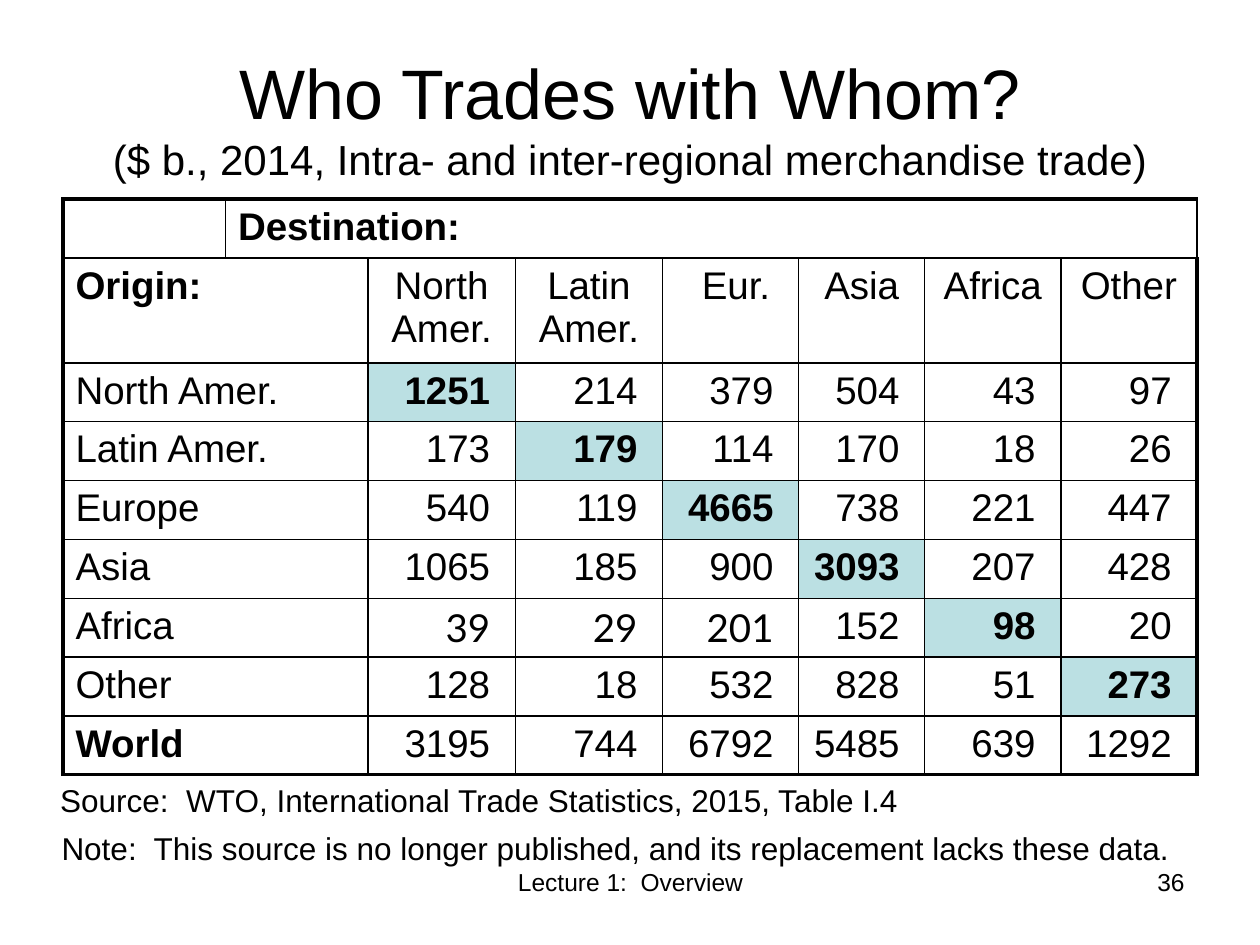
from lxml import etree
from pptx import Presentation
from pptx import util as u
from pptx.dml.color import RGBColor
from pptx.enum import text
from pptx.oxml import ns

BLACK = RGBColor(0x00, 0x00, 0x00)
PALE_TEAL = RGBColor(0xBB, 0xE0, 0xE3)
LEFT, CENTER, RIGHT = (text.PP_ALIGN.LEFT, text.PP_ALIGN.CENTER, text.PP_ALIGN.RIGHT)

# The slide is a grid of 100 columns by 75 rows
WIDTH, HEIGHT = u.Inches(10), u.Inches(7.5)
COL, ROW = WIDTH // 100, HEIGHT // 75

COL_WIDTHS = [12.9, 11.3, 11.7, 11.7, 10.8, 10, 10.8, 10.8]
ROW_HEIGHTS = [4.2, 8.3] + [4.4] * 5 + [4.5] * 2
DESTINATIONS = ["North Amer.", "Latin Amer.", " Eur.", "Asia", "Africa", "Other"]
TRADE = {
    "North Amer.": [1251, 214, 379, 504, 43, 97],
    "Latin Amer.": [173, 179, 114, 170, 18, 26],
    "Europe": [540, 119, 4665, 738, 221, 447],
    "Asia": [1065, 185, 900, 3093, 207, 428],
    "Africa": [39, 29, 201, 152, 98, 20],
    "Other": [128, 18, 532, 828, 51, 273],
    "World": [3195, 744, 6792, 5485, 639, 1292],
}


def grid(left, top, width, height):
    return int(left * COL), int(top * ROW), int(width * COL), int(height * ROW)


def add_run(p, words, size, bold=False, font="Arial"):
    r = p.add_run()
    r.text = words
    for name, value in {"name": font, "size": u.Pt(size), "bold": bold}.items():
        setattr(r.font, name, value)
    r.font.color.rgb = BLACK


def space_before(p, percent):
    pPr = p._p.get_or_add_pPr()
    spacing = etree.Element(ns.qn("a:spcBef"))
    etree.SubElement(spacing, ns.qn("a:spcPct"), val=str(percent * 1000))
    pPr.insert(0, spacing)


def add_title(s, box):
    title = s.shapes.title
    title.left, title.top, title.width, title.height = box
    tf = title.text_frame
    tf.auto_size = text.MSO_AUTO_SIZE.NONE
    tf.vertical_anchor = text.MSO_ANCHOR.MIDDLE
    p = tf.paragraphs[0]
    p.alignment = CENTER
    add_run(p, "Who Trades with Whom?", 40)
    p.add_line_break()
    add_run(p, "($ b., 2014, Intra- and inter-regional merchandise trade)", 24)


def add_line(s, box, words, size, align=LEFT, before=0, margin=0.05):
    tf = s.shapes.add_textbox(*box).text_frame
    tf.word_wrap = True
    tf.margin_top = tf.margin_bottom = u.Inches(margin)
    p = tf.paragraphs[0]
    p.alignment = align
    if before:
        space_before(p, before)
    add_run(p, words, size)


def set_borders(cell, widths):
    tcPr = cell._tc.get_or_add_tcPr()
    for i, (side, width) in enumerate(widths.items()):
        ln = etree.Element(ns.qn("a:ln" + side), w=str(u.Pt(width)))
        fill = etree.SubElement(ln, ns.qn("a:solidFill"))
        etree.SubElement(fill, ns.qn("a:srgbClr"), val=str(BLACK))
        tcPr.insert(i, ln)


def write_cell(cell, words, align=LEFT, bold=False, font="Arial"):
    p = cell.text_frame.paragraphs[0]
    p.alignment = align
    space_before(p, 20)
    add_run(p, words, 22, bold, font)


def add_trade_table(s, box):
    rows, cols = len(ROW_HEIGHTS), len(COL_WIDTHS)
    table = s.shapes.add_table(rows, cols, *box).table
    table.first_row = table.horz_banding = False
    for column, width in zip(table.columns, COL_WIDTHS):
        column.width = int(width * COL)
    for row, height in zip(table.rows, ROW_HEIGHTS):
        row.height = int(height * ROW)

    # Thick frame, thin inner rules
    for i in range(rows):
        for j in range(cols):
            cell = table.cell(i, j)
            cell.fill.background()
            outer = {"L": j == 0, "R": j == cols - 1, "T": i == 0, "B": i == rows - 1}
            set_borders(cell, {k: 2.25 if edge else 1 for k, edge in outer.items()})

    # Headings
    table.cell(0, 1).merge(table.cell(0, cols - 1))
    write_cell(table.cell(0, 1), "Destination:", bold=True)
    for j, name in enumerate(DESTINATIONS, 2):
        write_cell(table.cell(1, j), name, CENTER)
    for i, name in enumerate(["Origin:", *TRADE], 1):
        table.cell(i, 0).merge(table.cell(i, 1))
        write_cell(table.cell(i, 0), name, bold=name in ("Origin:", "World"))

    # Values, with trade inside a region marked
    for i, (origin, values) in enumerate(TRADE.items()):
        for j, value in enumerate(values):
            cell = table.cell(i + 2, j + 2)
            cell.margin_left, cell.margin_right = 0, u.Inches(0.2)
            font = "Lato" if origin == "Africa" and j < 3 else "Arial"
            write_cell(cell, str(value), RIGHT, i == j, font)
            if i == j:
                cell.fill.solid()
                cell.fill.fore_color.rgb = PALE_TEAL


def main():
    prs = Presentation()
    prs.slide_width, prs.slide_height = WIDTH, HEIGHT
    s = prs.slides.add_slide(prs.slide_layouts[5])

    # Footer
    add_line(s, grid(34.2, 68.3, 31.7, 5.2), "Lecture 1:  Overview", 14, CENTER)
    add_line(s, grid(71.7, 68.3, 23.3, 5.2), "36", 14, RIGHT)

    add_title(s, grid(5, 3, 90, 12.5))
    add_trade_table(s, grid(5, 15.8, 90, 45.7))

    # Source and note
    add_line(s, grid(3.8, 62, 81.7, 3),
             "Source:  WTO, International Trade Statistics, 2015, Table I.4",
             18, before=50, margin=0)
    add_line(s, grid(3.9, 65.3, 90.6, 4),
             "Note:  This source is no longer published, and its replacement lacks these data.",
             18, before=50)
    prs.save("out.pptx")


if __name__ == "__main__":
    main()
